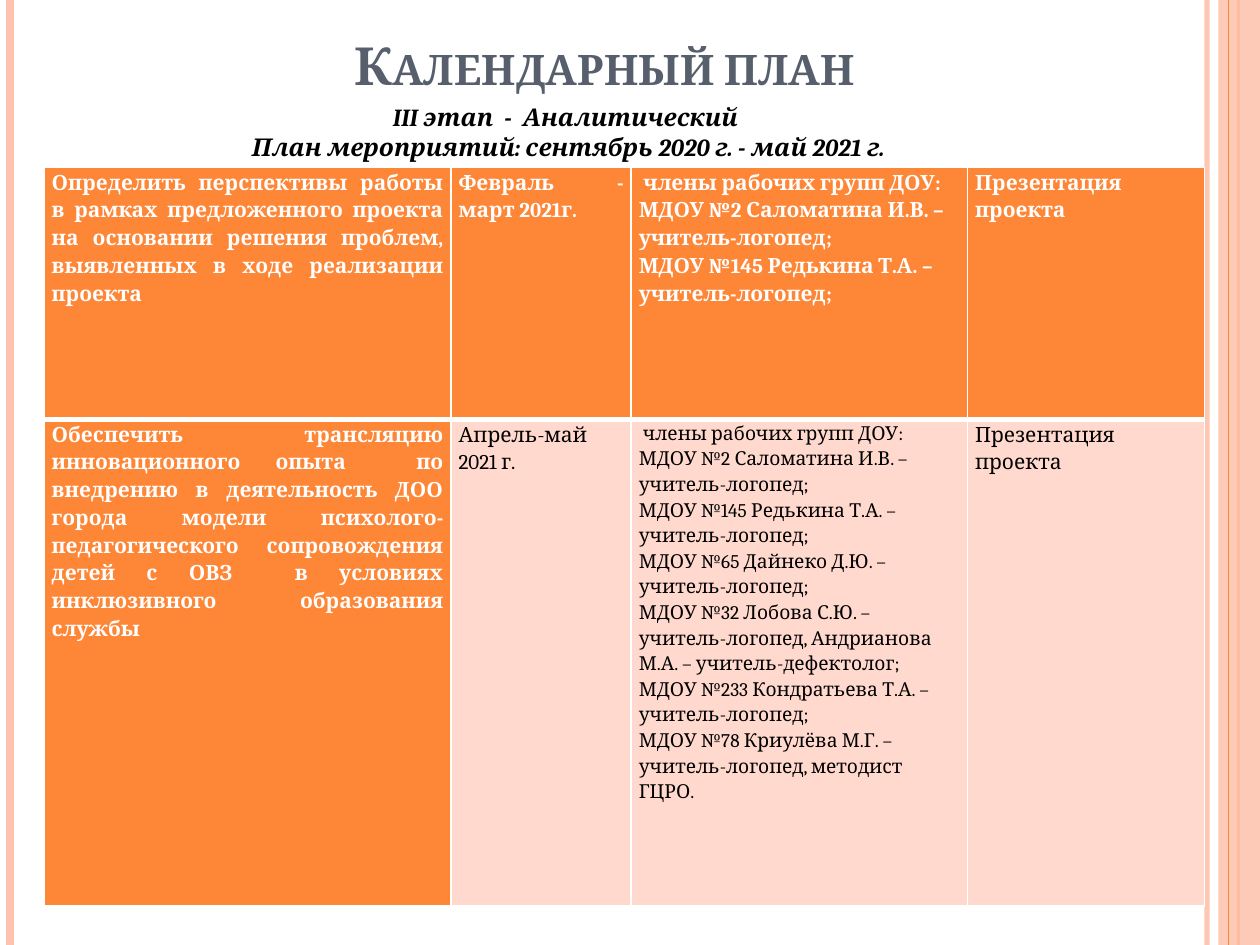
from dataclasses import dataclass
from typing import Optional

from lxml import etree
from pptx import Presentation
from pptx.dml.color import RGBColor
from pptx.enum.shapes import MSO_CONNECTOR, MSO_SHAPE
from pptx.enum.text import MSO_ANCHOR, PP_ALIGN
from pptx.oxml.ns import qn
from pptx.util import Inches, Pt

STRAIGHT = MSO_CONNECTOR.STRAIGHT
RECTANGLE = MSO_SHAPE.RECTANGLE
MIDDLE = MSO_ANCHOR.MIDDLE
LEFT, CENTER, JUSTIFY = PP_ALIGN.LEFT, PP_ALIGN.CENTER, PP_ALIGN.JUSTIFY

FONT = "Cambria"
SLIDE_W, SLIDE_H = 10, 7.5
COLORS = {
    "orange": "FE8637",
    "peach": "FEC3AE",
    "pale": "FFD9CE",
    "slate": "575F6D",
    "white": "FFFFFF",
    "black": "000000",
}


@dataclass
class Stripe:
    x: float
    color: str
    width: float
    alpha: Optional[int] = None


@dataclass
class Entry:
    lines: list[str]
    header: bool
    size: float = 12
    align: PP_ALIGN = JUSTIFY


BACK_STRIPES = [
    Stripe(9.58, "peach", 3, 93),
    Stripe(0.08, "peach", 4.5),
    Stripe(9.83, "orange", 1.5),
]
FRONT_STRIPE = Stripe(9.75, "orange", 0.75)

COL_WIDTHS = [3.23, 1.43, 2.67, 1.88]
ROW_HEIGHTS = [2, 3.86]
GROUP = [
    " члены рабочих групп ДОУ:",
    "МДОУ №2 Саломатина И.В. – учитель-логопед;",
    "МДОУ №145 Редькина Т.А. – учитель-логопед;",
]
PLAN = [
    [
        Entry(["Определить перспективы работы в рамках предложенного проекта "
               "на основании решения проблем, выявленных в ходе реализации проекта"], True),
        Entry(["Февраль - март 2021г."], True),
        Entry(GROUP, True, align=LEFT),
        Entry(["Презентация проекта"], True),
    ],
    [
        Entry(["Обеспечить трансляцию инновационного опыта  по внедрению в деятельность "
               "ДОО города модели психолого-педагогического сопровождения детей с ОВЗ  "
               "в условиях инклюзивного образования службы "], True),
        Entry(["Апрель-май 2021 г."], False),
        Entry(GROUP + [
            "МДОУ №65 Дайнеко Д.Ю. – учитель-логопед;",
            "МДОУ №32 Лобова С.Ю. – учитель-логопед, Андрианова М.А. – учитель-дефектолог;",
            "МДОУ №233 Кондратьева Т.А. – учитель-логопед;",
            "МДОУ №78 Криулёва М.Г. – учитель-логопед, методист ГЦРО.",
        ], False, size=11, align=LEFT),
        Entry(["Презентация проекта"], False),
    ],
]


def rgb(name: str) -> RGBColor:
    return RGBColor.from_string(COLORS[name])


def set_alpha(sp, percent: int) -> None:
    color = next(sp._element.spPr.iter(qn("a:srgbClr")))
    etree.SubElement(color, qn("a:alpha")).set("val", str(percent * 1000))


def write_text(tf, lines: list[str], *, size: float, color: str, align: PP_ALIGN,
               bold: bool = True, italic: bool = False, small_caps: bool = False,
               spacing: float = 1.0) -> None:
    for i, line in enumerate(lines):
        p = tf.paragraphs[0] if i == 0 else tf.add_paragraph()
        p.alignment = align
        p.line_spacing = spacing
        r = p.add_run()
        r.text = line
        r.font.name = FONT
        r.font.size = Pt(size)
        r.font.bold = bold
        r.font.italic = italic
        r.font.color.rgb = rgb(color)
        if small_caps:
            r._r.get_or_add_rPr().set("cap", "small")


def add_text(s, x: float, y: float, w: float, h: float, lines: list[str], *,
             wrap: bool = True, **style) -> None:
    tf = s.shapes.add_textbox(Inches(x), Inches(y), Inches(w), Inches(h)).text_frame
    tf.word_wrap = wrap
    tf.vertical_anchor = MIDDLE
    write_text(tf, lines, align=CENTER, **style)


def add_stripe(s, stripe: Stripe) -> None:
    x = Inches(stripe.x)
    line = s.shapes.add_connector(STRAIGHT, x, Inches(0), x, Inches(SLIDE_H))
    line.line.color.rgb = rgb(stripe.color)
    line.line.width = Pt(stripe.width)
    if stripe.alpha is not None:
        set_alpha(line, stripe.alpha)
    etree.SubElement(line._element.spPr, qn("a:effectLst"))


def add_side_band(s) -> None:
    sp = s.shapes.add_shape(RECTANGLE, Inches(9.67), Inches(0), Inches(0.33), Inches(SLIDE_H))
    sp.shadow.inherit = False
    sp.fill.solid()
    sp.fill.fore_color.rgb = rgb("peach")
    sp.line.fill.background()
    set_alpha(sp, 87)


def set_borders(cell, widths: dict[str, float]) -> None:
    tc_pr = cell._tc.get_or_add_tcPr()
    for side, width in widths.items():
        ln = etree.SubElement(tc_pr, qn(f"a:ln{side}"), w=str(Pt(width)))
        fill = etree.SubElement(ln, qn("a:solidFill"))
        etree.SubElement(fill, qn("a:srgbClr"), val=COLORS["white"])


def fill_cell(cell, entry: Entry, borders: dict[str, float]) -> None:
    cell.margin_left = cell.margin_right = Inches(0.06)
    cell.margin_top = cell.margin_bottom = Inches(0)
    set_borders(cell, borders)
    cell.fill.solid()
    cell.fill.fore_color.rgb = rgb("orange" if entry.header else "pale")
    write_text(cell.text_frame, entry.lines, size=entry.size, align=entry.align,
               color="white" if entry.header else "black", bold=entry.header, spacing=1.15)


def add_plan(s) -> None:
    table = s.shapes.add_table(len(PLAN), len(COL_WIDTHS), Inches(0.35), Inches(1.33),
                               Inches(sum(COL_WIDTHS)), Inches(sum(ROW_HEIGHTS))).table
    for column, width in zip(table.columns, COL_WIDTHS):
        column.width = Inches(width)
    for i, (row, height) in enumerate(zip(PLAN, ROW_HEIGHTS)):
        table.rows[i].height = Inches(height)
        borders = {"L": 1, "R": 1, "T": 3 if i == 1 else 1, "B": 3 if i == 0 else 1}
        for j, entry in enumerate(row):
            fill_cell(table.cell(i, j), entry, borders)


def main() -> None:
    prs = Presentation()
    prs.slide_width, prs.slide_height = Inches(SLIDE_W), Inches(SLIDE_H)
    s = prs.slides.add_slide(prs.slide_layouts[6])
    for stripe in BACK_STRIPES:
        add_stripe(s, stripe)
    add_side_band(s)
    add_stripe(s, FRONT_STRIPE)
    add_text(s, 0.75, 0.21, 8.17, 0.61, ["Календарный план "],
             size=30, color="slate", small_caps=True)
    add_plan(s)
    add_text(s, 1.77, 0.76, 5.48, 0.57,
             ["III этап  -  Аналитический ", "План мероприятий: сентябрь 2020 г. - май 2021 г."],
             wrap=False, size=14, color="black", italic=True)
    prs.save("out.pptx")


if __name__ == "__main__":
    main()
